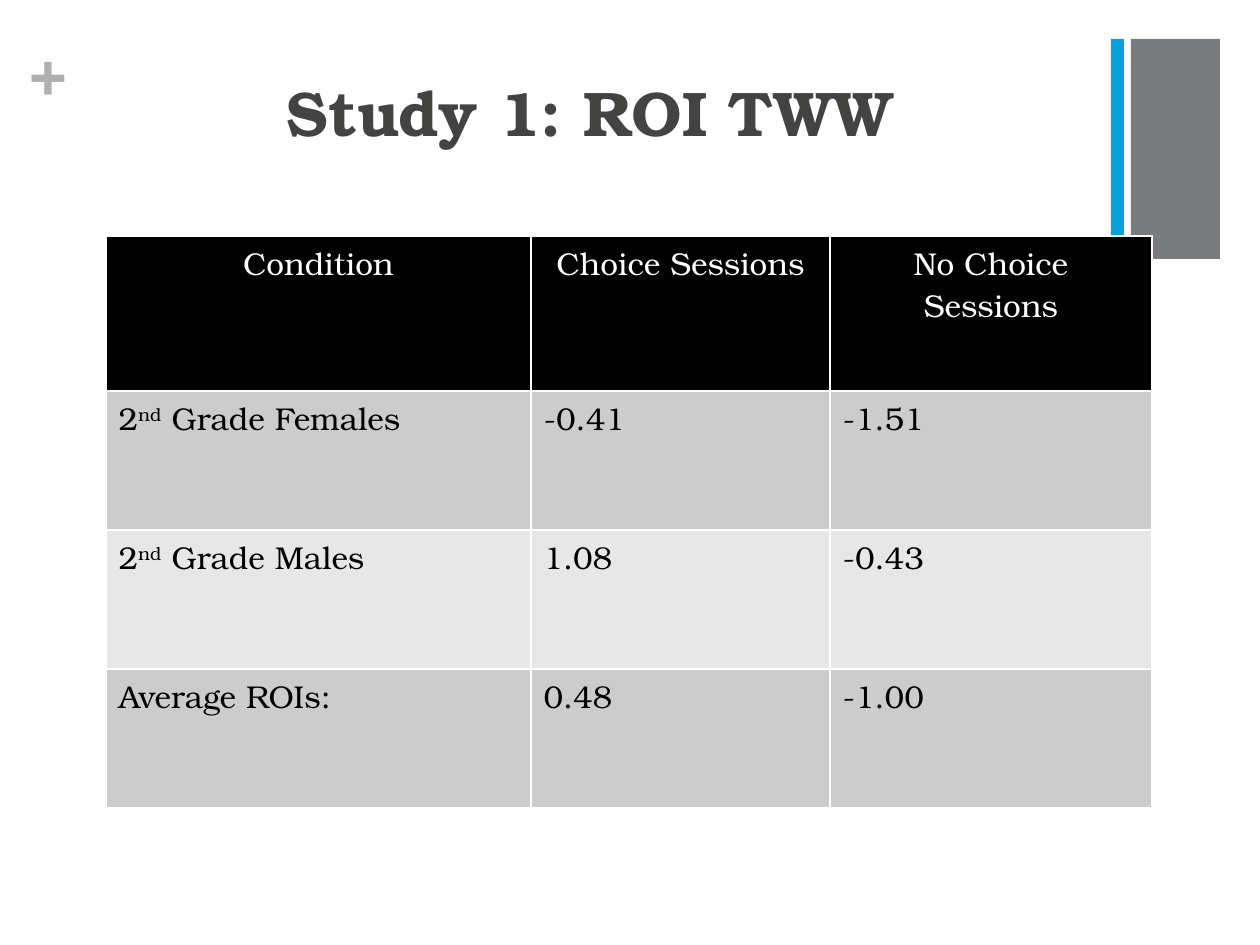
import pptx
import pptx.dml.color
import pptx.enum.shapes
import pptx.enum.text
import pptx.oxml
import pptx.oxml.ns
import pptx.util
from dataclasses import dataclass

EMU_PER_PX = 914400 // 126
ALIGN = pptx.enum.text.PP_ALIGN


@dataclass(frozen=True)
class Theme:
    font: str = "TeX Gyre Bonum"
    title_size: int = 36
    table_size: int = 18
    title: str = "434342"
    plus: str = "AFB0B2"
    gray_bar: str = "797B7E"
    blue_bar: str = "08A1D9"
    header: str = "000000"
    header_text: str = "FFFFFF"
    body_text: str = "000000"
    bands: tuple = ("CCCCCC", "E7E7E7")
    border: str = "FFFFFF"


THEME = Theme()

HEADINGS = ["Condition", "Choice Sessions", "No Choice Sessions"]
# A label may be split as (base, superscript, rest)
RESULTS = [
    [("2", "nd", " Grade Females"), "-0.41", "-1.51"],
    [("2", "nd", " Grade Males"), "1.08", "-0.43"],
    ["Average ROIs:", "0.48", "-1.00"],
]
COLUMN_WIDTHS = [425, 299, 322]
HEADER_HEIGHT, ROW_HEIGHT = 155, 139


def px(length):
    return pptx.util.Emu(length * EMU_PER_PX)


def rgb(color):
    return pptx.dml.color.RGBColor.from_string(color)


def style(paragraph, size, color, align=ALIGN.LEFT, bold=False):
    paragraph.alignment = align
    font = paragraph.font
    font.name, font.size, font.bold = THEME.font, pptx.util.Pt(size), bold
    font.color.rgb = rgb(color)


def add_bar(slide, left, top, width, height, color):
    bar = slide.shapes.add_shape(
        pptx.enum.shapes.MSO_SHAPE.RECTANGLE, px(left), px(top), px(width), px(height))
    bar.shadow.inherit = False
    bar.fill.solid()
    bar.fill.fore_color.rgb = rgb(color)
    bar.line.fill.background()


def add_heading(slide, text, left, top, width, height, color, align, inset=True):
    frame = slide.shapes.add_textbox(px(left), px(top), px(width), px(height)).text_frame
    frame.word_wrap = True
    if not inset:
        frame.margin_left = frame.margin_right = 0
        frame.margin_top = frame.margin_bottom = 0
    paragraph = frame.paragraphs[0]
    paragraph.text = text
    style(paragraph, THEME.title_size, color, align, bold=True)


def set_borders(cell):
    properties = cell._tc.get_or_add_tcPr()
    for position, side in enumerate(("lnL", "lnR", "lnT", "lnB")):
        properties.insert(position, pptx.oxml.parse_xml(
            f'<a:{side} {pptx.oxml.ns.nsdecls("a")} w="{pptx.util.Pt(1)}">'
            f'<a:solidFill><a:srgbClr val="{THEME.border}"/></a:solidFill></a:{side}>'))


def fill_cell(cell, content, fill, color, align):
    paragraph = cell.text_frame.paragraphs[0]
    parts = content if isinstance(content, tuple) else (content,)
    for index, part in enumerate(parts):
        run = paragraph.add_run()
        run.text = part
        if index == 1:
            run.font._element.set("baseline", "30000")
    style(paragraph, THEME.table_size, color, align)
    cell.fill.solid()
    cell.fill.fore_color.rgb = rgb(fill)
    set_borders(cell)


def add_results_table(slide, left, top):
    heights = [HEADER_HEIGHT] + [ROW_HEIGHT] * len(RESULTS)
    table = slide.shapes.add_table(
        len(heights), len(COLUMN_WIDTHS), px(left), px(top),
        px(sum(COLUMN_WIDTHS)), px(sum(heights))).table
    for column, width in zip(table.columns, COLUMN_WIDTHS):
        column.width = px(width)
    for row, height in zip(table.rows, heights):
        row.height = px(height)

    for column, heading in enumerate(HEADINGS):
        fill_cell(table.cell(0, column), heading, THEME.header, THEME.header_text, ALIGN.CENTER)
    for index, values in enumerate(RESULTS):
        band = THEME.bands[index % len(THEME.bands)]
        for column, value in enumerate(values):
            fill_cell(table.cell(index + 1, column), value, band, THEME.body_text, ALIGN.LEFT)


def main():
    presentation = pptx.Presentation()
    presentation.slide_width = pptx.util.Inches(10)
    presentation.slide_height = pptx.util.Inches(7.5)
    slide = presentation.slides.add_slide(presentation.slide_layouts[6])

    # Corner decoration
    add_bar(slide, 1131, 39, 89, 220, THEME.gray_bar)
    add_heading(slide, "+", 30, 32, 37, 77, THEME.plus, ALIGN.LEFT, inset=False)
    add_bar(slide, 1111, 39, 13, 220, THEME.blue_bar)

    # Title and results
    add_heading(slide, "Study 1: ROI TWW", 69, 67, 1041, 154, THEME.title, ALIGN.CENTER)
    add_results_table(slide, 106, 236)

    presentation.save("out.pptx")


if __name__ == "__main__":
    main()
